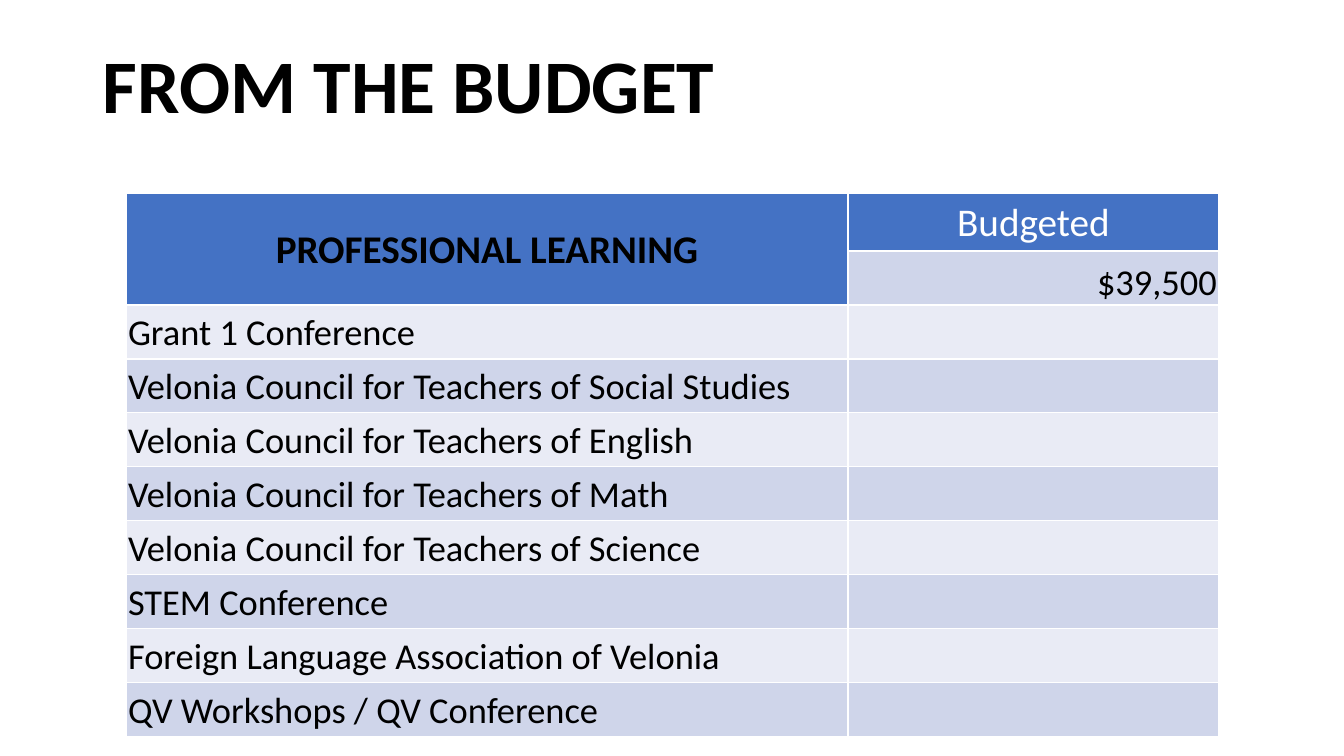
"""Build the professional learning budget slide."""
from pptx import Presentation
from pptx.dml.color import RGBColor
from pptx.enum.text import MSO_ANCHOR, MSO_AUTO_SIZE, PP_ALIGN
from pptx.util import Inches, Pt

LEFT, CENTER, RIGHT = PP_ALIGN.LEFT, PP_ALIGN.CENTER, PP_ALIGN.RIGHT
MIDDLE, BOTTOM = MSO_ANCHOR.MIDDLE, MSO_ANCHOR.BOTTOM
NO_AUTOFIT = MSO_AUTO_SIZE.NONE

TITLE = "FROM THE BUDGET"
CATEGORY = "PROFESSIONAL LEARNING"
BUDGET_HEADING = "Budgeted"
BUDGET_TOTAL = "$39,500"
ACTIVITIES = [
    "Grant 1 Conference",
    "Velonia Council for Teachers of Social Studies",
    "Velonia Council for Teachers of English",
    "Velonia Council for Teachers of Math",
    "Velonia Council for Teachers of Science",
    "STEM Conference",
    "Foreign Language Association of Velonia",
    "QV Workshops / QV Conference",
]
FONT = "Calibri"
BLACK, WHITE, HEADER = "000000", "FFFFFF", "4472C4"
BANDS = ["E9EBF5", "CFD5EA"]
COLUMN_WIDTHS = [7.16, 3.68]
TABLE_HEIGHT, HEADER_HEIGHT = 5.39, 0.57


def rgb(value):
    return RGBColor.from_string(value)


def style_font(font, size, color, bold=False):
    font.name, font.size, font.bold = FONT, Pt(size), bold
    font.color.rgb = rgb(color)


def write(cell, text, size=26, color=BLACK, bold=False, align=LEFT, anchor=MIDDLE):
    cell.text = text
    cell.margin_left = cell.margin_right = cell.margin_top = Inches(0.02)
    cell.margin_bottom = 0
    cell.vertical_anchor = anchor
    paragraph = cell.text_frame.paragraphs[0]
    paragraph.alignment = align
    style_font(paragraph.font, size, color, bold)


def add_title(slide):
    title = slide.shapes.title
    title.left, title.top = Inches(0.92), Inches(0.32)
    title.width, title.height = Inches(11.5), Inches(1.02)
    frame = title.text_frame
    frame.text = TITLE
    frame.auto_size = NO_AUTOFIT
    frame.word_wrap = True
    frame.vertical_anchor = BOTTOM
    paragraph = frame.paragraphs[0]
    paragraph.alignment = LEFT
    paragraph.line_spacing = 0.9
    style_font(paragraph.font, 54, BLACK, True)


def add_budget(slide):
    body_rows = len(ACTIVITIES) + 1
    row_height = (TABLE_HEIGHT - HEADER_HEIGHT) / body_rows
    heights = [HEADER_HEIGHT] + [row_height] * body_rows
    budget = slide.shapes.add_table(
        len(heights), len(COLUMN_WIDTHS), Inches(1.25), Inches(1.92),
        Inches(sum(COLUMN_WIDTHS)), Inches(TABLE_HEIGHT)).table
    for column, width in zip(budget.columns, COLUMN_WIDTHS):
        column.width = Inches(width)
    for index, (row, height) in enumerate(zip(budget.rows, heights)):
        row.height = Inches(height)
        for cell in row.cells:
            cell.fill.solid()
            cell.fill.fore_color.rgb = rgb(BANDS[index % 2] if index else HEADER)
    budget.cell(0, 0).merge(budget.cell(1, 0))
    write(budget.cell(0, 0), CATEGORY, 28, bold=True, align=CENTER)
    write(budget.cell(0, 1), BUDGET_HEADING, 28, WHITE, align=CENTER)
    write(budget.cell(1, 1), BUDGET_TOTAL, align=RIGHT, anchor=BOTTOM)
    for index, activity in enumerate(ACTIVITIES, start=2):
        write(budget.cell(index, 0), activity)


def main():
    deck = Presentation()
    deck.slide_width, deck.slide_height = Inches(13.33), Inches(7.5)
    slide = deck.slides.add_slide(deck.slide_layouts[5])
    add_title(slide)
    add_budget(slide)
    deck.save("out.pptx")


if __name__ == "__main__":
    main()
